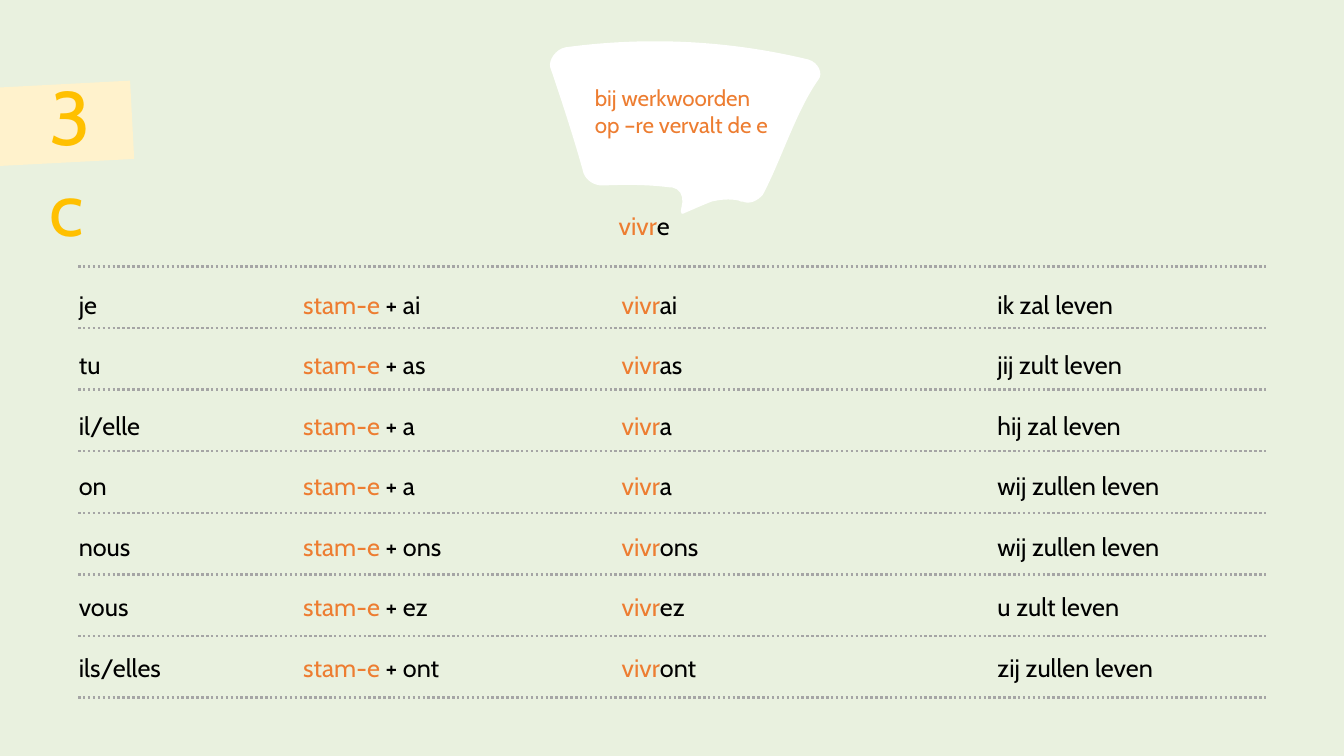
from pptx import Presentation
from pptx.dml.color import RGBColor
from pptx.enum.dml import MSO_LINE
from pptx.enum.shapes import MSO_CONNECTOR, MSO_SHAPE
from pptx.oxml.ns import qn
from pptx.util import Pt
from lxml import etree

RECTANGLE = MSO_SHAPE.RECTANGLE
STRAIGHT = MSO_CONNECTOR.STRAIGHT
DOTTED = MSO_LINE.ROUND_DOT

PALE_GREEN = RGBColor(0xE9, 0xF1, 0xDF)
CREAM = RGBColor(0xFF, 0xF2, 0xCC)
GOLD = RGBColor(0xFF, 0xC0, 0x00)
ORANGE = RGBColor(0xED, 0x7D, 0x31)
GREY = RGBColor(0xA5, 0xA5, 0xA5)
BLACK = RGBColor(0, 0, 0)
WHITE = RGBColor(0xFF, 0xFF, 0xFF)

FONT = "Cabin"
VERB_STEM = "vivr"
CONJUGATION = [  # pronoun, ending, translation
    ("je", "ai", "ik zal leven"),
    ("tu", "as", "jij zult leven"),
    ("il/elle", "a", "hij zal leven"),
    ("on", "a", "wij zullen leven"),
    ("nous", "ons", "wij zullen leven"),
    ("vous", "ez", "u zult leven"),
    ("ils/elles", "ont", "zij zullen leven"),
]
COLUMN_TOP = 181.44
RULE_LEFT, RULE_RIGHT, RULE_TOP, RULE_PITCH = 55.8, 906, 190.3, 44
# Rows that follow the one above after a line break in the same paragraph
PRONOUN_BREAKS = (4,)
FORM_BREAKS = (3, 4, 5)

BUBBLE_START = (545, 139)
BUBBLE_CURVES = [  # two control points and an end point each
    ((541.4, 143.3), (535.7, 146.2), (530.6, 144)),
    ((529.2, 144), (528.5, 144), (527.8, 143.3)),
    ((521.3, 141.8), (514.1, 142.6), (508.3, 144)),
    ((502.6, 146.2), (494.6, 149.8), (489.6, 151.9)),
    ((484.6, 154.8), (486.7, 149.8), (487.4, 144.7)),
    ((488.2, 139.7), (485.3, 134.6), (480.2, 133.9)),
    ((479.5, 133.9), (479.5, 133.9), (478.8, 133.9)),
    ((463, 131.8), (446.4, 131.8), (430.6, 132.5)),
    ((424.1, 132.5), (419, 128.9), (416.9, 123.8)),
    ((411.1, 102.2), (400.3, 69.1), (393.1, 48.2)),
    ((391.7, 43.2), (396.7, 35.3), (403.9, 33.8)),
    ((462.2, 25.9), (520.6, 28.8), (577.4, 42.5)),
    ((584.6, 44.6), (588.2, 52.6), (584.6, 56.9)),
    ((568.8, 79.2), (558, 114.5), BUBBLE_START),
]


def add_text(slide, left, top, width, height, lines, size=18, spacing=None, breaks=()):
    """Each line is a list of (text, colour) runs."""
    box = slide.shapes.add_textbox(Pt(left), Pt(top), Pt(width), Pt(height))
    frame = box.text_frame
    frame.word_wrap = True
    paragraph = frame.paragraphs[0]
    for index, runs in enumerate(lines):
        if index in breaks:
            paragraph.add_line_break()
        elif index:
            paragraph = frame.add_paragraph()
        if spacing:
            paragraph.line_spacing = spacing
        for text, colour in runs:
            run = paragraph.add_run()
            run.text = text
            run.font.name = FONT
            run.font.size = Pt(size)
            run.font.color.rgb = colour


def add_column(slide, left, width, height, lines, breaks=FORM_BREAKS):
    add_text(slide, left, COLUMN_TOP, width, height, lines, spacing=2.0, breaks=breaks)


def add_rule(slide, y):
    rule = slide.shapes.add_connector(
        STRAIGHT, Pt(RULE_LEFT), Pt(y), Pt(RULE_RIGHT), Pt(y))
    rule.line.color.rgb = GREY
    rule.line.width = Pt(1.75)
    rule.line.dash_style = DOTTED
    etree.SubElement(rule._element.spPr, qn("a:effectLst"))


def paint(shape, colour):
    shape.shadow.inherit = False
    shape.fill.solid()
    shape.fill.fore_color.rgb = colour
    shape.line.fill.background()


def add_panel(slide, left, top, width, height, colour, rotation=0):
    panel = slide.shapes.add_shape(
        RECTANGLE, Pt(left), Pt(top), Pt(width), Pt(height))
    panel.rotation = rotation
    paint(panel, colour)


def add_bubble(slide):
    points = [(Pt(x), Pt(y)) for curve in BUBBLE_CURVES for x, y in curve]
    builder = slide.shapes.build_freeform(*map(Pt, BUBBLE_START))
    builder.add_line_segments(points, close=True)
    bubble = builder.convert_to_shape()
    paint(bubble, WHITE)
    # Join every three segments into one cubic curve
    segments = list(bubble._element.iter(qn("a:lnTo")))
    for first, second, end in zip(segments[::3], segments[1::3], segments[2::3]):
        first.tag = qn("a:cubicBezTo")
        for segment in (second, end):
            first.append(segment[0])
            segment.getparent().remove(segment)


def main():
    deck = Presentation()
    deck.slide_width, deck.slide_height = Pt(960), Pt(540)
    slide = deck.slides.add_slide(deck.slide_layouts[6])

    # Backdrop
    add_panel(slide, 0, 0, 960, 540.5, PALE_GREEN)

    # Infinitive above the table
    add_text(slide, 434.9, 146.5, 225, 29, [[(VERB_STEM, ORANGE), ("e", BLACK)]])

    # Dotted rules
    for index in range(len(CONJUGATION) + 1):
        add_rule(slide, RULE_TOP + index * RULE_PITCH)

    # Conjugation columns
    add_column(slide, 49.2, 402.5, 306, [
        [(pronoun, BLACK)] for pronoun, _, _ in CONJUGATION], PRONOUN_BREAKS)
    add_column(slide, 437, 223, 306, [
        [(VERB_STEM, ORANGE), (ending, BLACK)] for _, ending, _ in CONJUGATION])
    add_column(slide, 209.5, 223, 334, [
        [("stam-e", ORANGE), (f" + {ending}", BLACK)] for _, ending, _ in CONJUGATION])
    add_column(slide, 705.4, 223, 334, [
        [(translation, BLACK)] for _, _, translation in CONJUGATION])

    # Section label, narrow enough to break after the digit
    add_panel(slide, -16.5, 60.5, 111, 56, CREAM, rotation=357)
    add_text(slide, 28.3, 46.4, 50, 72.7, [[("3c", GOLD)]], size=54)

    # Speech bubble with the rule
    add_bubble(slide)
    add_text(slide, 417.8, 56.9, 160.5, 46, [
        [("bij werkwoorden", ORANGE)], [("op –re vervalt de e", ORANGE)]], size=16)

    deck.save("out.pptx")


if __name__ == "__main__":
    main()
